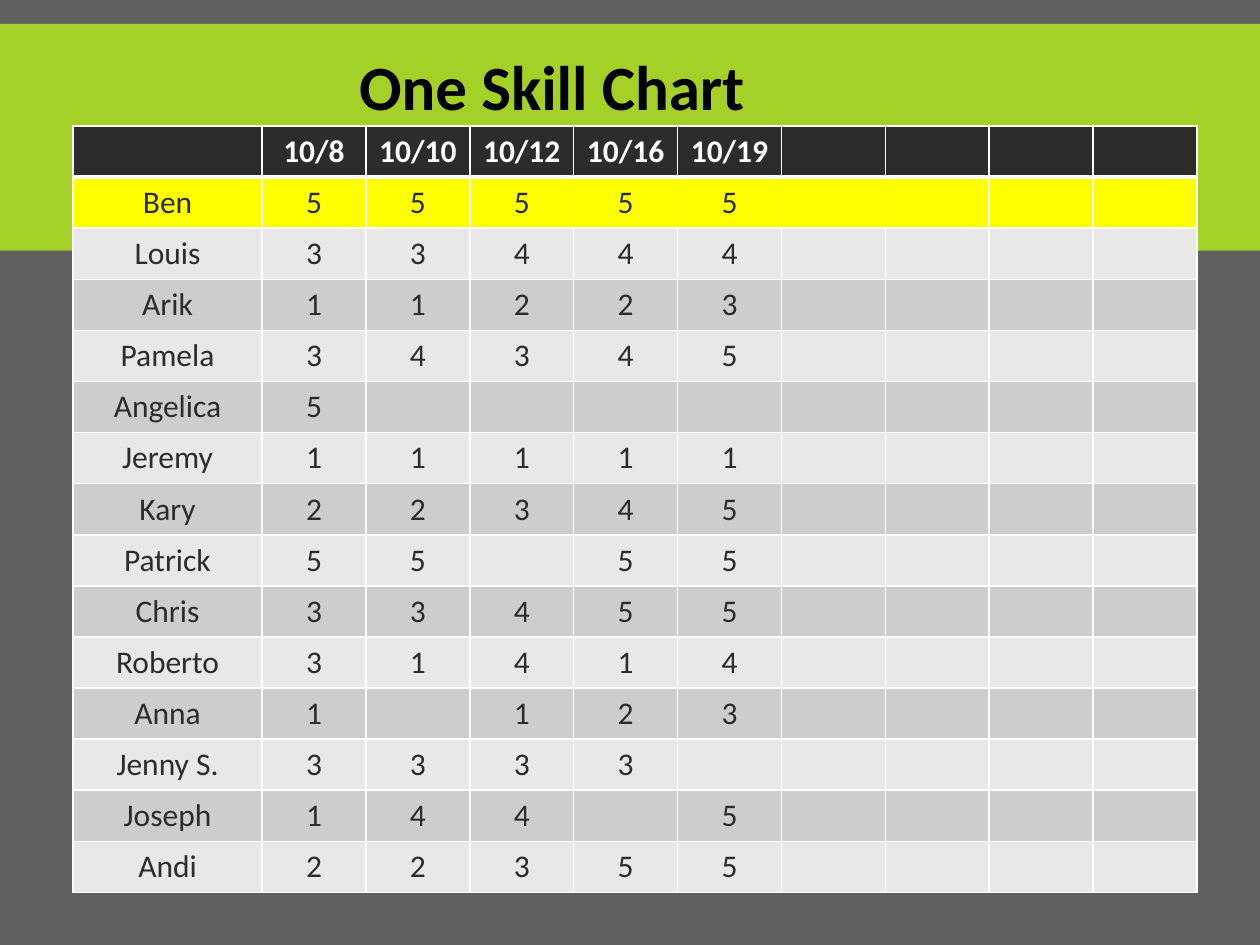
from dataclasses import dataclass

from lxml.etree import SubElement
from pptx import Presentation
from pptx.dml.color import RGBColor
from pptx.enum.shapes import MSO_SHAPE
from pptx.enum.text import MSO_ANCHOR, PP_ALIGN
from pptx.oxml.ns import qn
from pptx.util import Inches, Pt

TITLE = "One Skill Chart"
DATES = ["10/8", "10/10", "10/12", "10/16", "10/19"]
SCORES = [
    ("Ben", 5, 5, 5, 5, 5),
    ("Louis", 3, 3, 4, 4, 4),
    ("Arik", 1, 1, 2, 2, 3),
    ("Pamela", 3, 4, 3, 4, 5),
    ("Angelica", 5, "", "", "", ""),
    ("Jeremy", 1, 1, 1, 1, 1),
    ("Kary", 2, 2, 3, 4, 5),
    ("Patrick", 5, 5, "", 5, 5),
    ("Chris", 3, 3, 4, 5, 5),
    ("Roberto", 3, 1, 4, 1, 4),
    ("Anna", 1, "", 1, 2, 3),
    ("Jenny S.", 3, 3, 3, 3, ""),
    ("Joseph", 1, 4, 4, "", 5),
    ("Andi", 2, 2, 3, 5, 5),
]
HIGHLIGHTED = "Ben"
SPARE_COLUMNS = 4


@dataclass(frozen=True)
class Theme:
    font: str = "Calibri"
    title_size: int = 36
    cell_size: int = 18
    title: str = "000000"
    background: str = "606060"
    band: str = "A5D028"
    dark: str = "2C2C2C"
    white: str = "FFFFFF"
    highlight: str = "FFFF00"
    stripes: tuple = ("CDCDCD", "E8E8E8")


THEME = Theme()


def paint(fill, color):
    fill.solid()
    fill.fore_color.rgb = RGBColor.from_string(color)


def style_text(paragraph, size, color, bold, align):
    paragraph.alignment = align
    font = paragraph.font
    font.name, font.size, font.bold = THEME.font, Pt(size), bold
    font.color.rgb = RGBColor.from_string(color)


def add_borders(cell, bottom=1, top=1):
    """Draw white cell borders; widths are in points."""
    properties = cell._tc.get_or_add_tcPr()
    sides = [("a:lnL", 1), ("a:lnR", 1), ("a:lnT", top), ("a:lnB", bottom)]
    for position, (side, width) in enumerate(sides):
        line = SubElement(properties, qn(side), w=str(Pt(width)))
        fill = SubElement(line, qn("a:solidFill"))
        SubElement(fill, qn("a:srgbClr"), val=THEME.white)
        properties.insert(position, line)  # borders precede the cell fill


def add_band(slide, width):
    band = slide.shapes.add_shape(
        MSO_SHAPE.RECTANGLE, 0, Inches(0.19), width, Inches(1.8))
    paint(band.fill, THEME.band)
    band.line.fill.background()
    band.shadow.inherit = False
    slide.shapes._spTree.insert(2, band._element)  # behind the title


def add_title(slide):
    title = slide.shapes.title
    title.left, title.top = Inches(2.75), Inches(0.33)
    title.width, title.height = Inches(4.92), Inches(0.71)
    title.text_frame.text = TITLE
    title.text_frame.vertical_anchor = MSO_ANCHOR.TOP
    style_text(title.text_frame.paragraphs[0], THEME.title_size, THEME.title,
               True, PP_ALIGN.LEFT)


def add_scores(slide):
    rows = [("", *DATES), *SCORES]
    column_count = len(rows[0]) + SPARE_COLUMNS
    width, height, name_width = Inches(8.92), Inches(6.08), Inches(1.5)
    table = slide.shapes.add_table(
        len(rows), column_count, Inches(0.58), Inches(1), width, height).table

    for index, column in enumerate(table.columns):
        column.width = (width - name_width) // (column_count - 1) if index else name_width

    for index, values in enumerate(rows):
        header = index == 0
        if header:
            fill = THEME.dark
        elif values[0] == HIGHLIGHTED:
            fill = THEME.highlight
        else:
            fill = THEME.stripes[index % 2 == 0]
        for column, value in enumerate(values + ("",) * SPARE_COLUMNS):
            cell = table.cell(index, column)
            cell.text = str(value)
            cell.vertical_anchor = MSO_ANCHOR.MIDDLE
            cell.margin_left = cell.margin_right = Inches(0.05)
            paint(cell.fill, fill)
            add_borders(cell, bottom=3 if header else 1, top=3 if index == 1 else 1)
            style_text(cell.text_frame.paragraphs[0], THEME.cell_size,
                       THEME.white if header else THEME.dark, header,
                       PP_ALIGN.CENTER)


def main():
    prs = Presentation()
    prs.slide_width, prs.slide_height = Inches(10), Inches(7.5)
    slide = prs.slides.add_slide(prs.slide_layouts[5])
    paint(slide.background.fill, THEME.background)
    add_band(slide, prs.slide_width)
    add_title(slide)
    add_scores(slide)
    prs.save("out.pptx")


if __name__ == "__main__":
    main()
